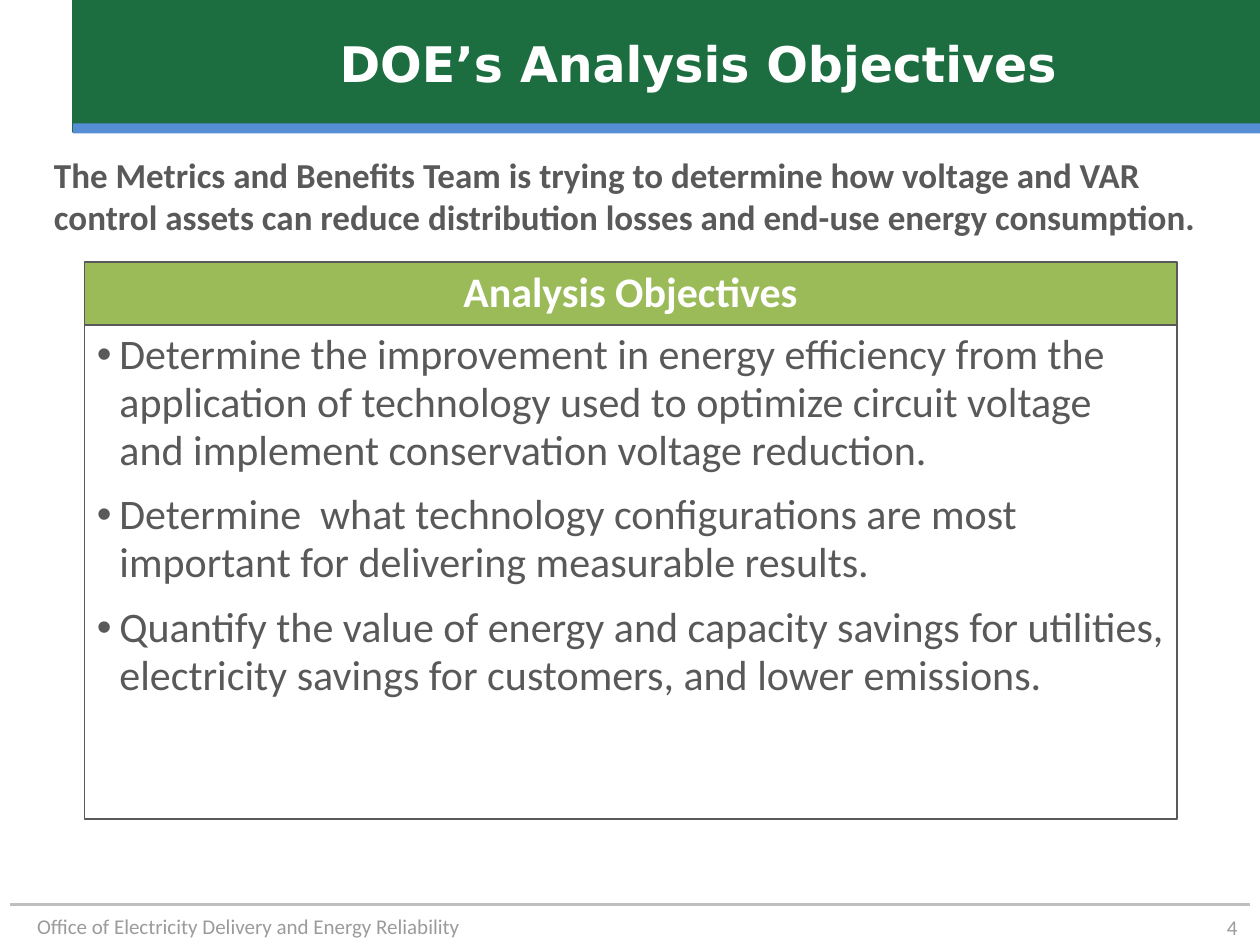
from lxml.etree import SubElement
from pptx import Presentation
from pptx.dml.color import RGBColor
from pptx.enum.shapes import MSO_CONNECTOR, MSO_SHAPE
from pptx.enum.text import MSO_ANCHOR, PP_ALIGN
from pptx.oxml.ns import qn
from pptx.util import Inches, Pt

COLORS = {
    "green": "1C6E41",
    "blue": "558ED5",
    "lime": "9BBB59",
    "text": "595959",
    "footer": "9B9B9B",
    "rule": "BFBFBF",
    "white": "FFFFFF",
}

OBJECTIVES = [
    "Determine the improvement in energy efficiency from the application of "
    "technology used to optimize circuit voltage and implement conservation "
    "voltage reduction.",
    "Determine  what technology configurations are most important for "
    "delivering measurable results.",
    "Quantify the value of energy and capacity savings for utilities, "
    "electricity savings for customers, and lower emissions.",
]


def color(name):
    return RGBColor.from_string(COLORS[name])


def add_rectangle(page, left, top, width, height, fill=None, line=None):
    box = page.shapes.add_shape(
        MSO_SHAPE.RECTANGLE, Inches(left), Inches(top), Inches(width), Inches(height))
    box.shadow.inherit = False
    if fill:
        box.fill.solid()
        box.fill.fore_color.rgb = color(fill)
    else:
        box.fill.background()
    if line:
        box.line.color.rgb = color(line)
        box.line.width = Pt(1)
    else:
        box.line.fill.background()
    return box


def add_text_box(page, left, top, width, height):
    return page.shapes.add_textbox(
        Inches(left), Inches(top), Inches(width), Inches(height))


def add_rule(page, left, right, top):
    rule = page.shapes.add_connector(
        MSO_CONNECTOR.STRAIGHT, Inches(left), Inches(top), Inches(right), Inches(top))
    rule.line.color.rgb = color("rule")
    rule.line.width = Pt(1.75)
    SubElement(rule._element.spPr, qn("a:effectLst"))


def add_bullet(para, indent):
    properties = para._p.get_or_add_pPr()
    properties.set("marL", str(Inches(indent)))
    properties.set("indent", str(-Inches(indent)))
    SubElement(properties, qn("a:buFont"), typeface="Arial")
    SubElement(properties, qn("a:buChar"), char="•")


def write_text(box, *texts, size, ink, font="Calibri", bold=False,
               align=PP_ALIGN.LEFT, anchor=MSO_ANCHOR.TOP, spacing=None,
               gap=0, bullet_indent=None, vertical_inset=0.05):
    frame = box.text_frame
    frame.word_wrap = True
    frame.vertical_anchor = anchor
    frame.margin_top = frame.margin_bottom = Inches(vertical_inset)
    for index, text in enumerate(texts):
        para = frame.add_paragraph() if index else frame.paragraphs[0]
        para.alignment = align
        if spacing:
            para.line_spacing = spacing
        if index:
            para.space_before = Pt(gap)
        if bullet_indent:
            add_bullet(para, bullet_indent)
        span = para.add_run()
        span.text = text
        span.font.name = font
        span.font.size = Pt(size)
        span.font.bold = bold
        span.font.color.rgb = color(ink)


def add_header(page):
    add_rectangle(page, 0.58, 0, 9.42, 1.05, fill="green", line="green")
    add_rectangle(page, 0.58, 0.98, 9.42, 0.08, fill="blue")
    title = add_text_box(page, 1.08, 0, 8.92, 1)
    write_text(title, "DOE’s Analysis Objectives", size=28, ink="white",
               font="DejaVu Sans", bold=True, align=PP_ALIGN.CENTER,
               anchor=MSO_ANCHOR.MIDDLE)


def add_footer(page):
    add_rule(page, 0.08, 9.92, 7.18)
    office = add_text_box(page, 0, 7.2, 3.75, 0.3)
    write_text(office, "Office of Electricity Delivery and Energy Reliability",
               size=12, ink="footer", align=PP_ALIGN.RIGHT)
    number = add_text_box(page, 7.42, 7.21, 2.5, 0.29)
    write_text(number, "4", size=12, ink="footer", align=PP_ALIGN.RIGHT,
               anchor=MSO_ANCHOR.MIDDLE, vertical_inset=0)


def add_objectives(page, left, top, width, heading_height, body_height):
    body = add_rectangle(page, left, top + heading_height, width, body_height,
                         line="text")
    write_text(body, *OBJECTIVES, size=24, ink="text", spacing=0.95, gap=9.6,
               bullet_indent=0.18)
    heading = add_rectangle(page, left, top, width, heading_height,
                            fill="lime", line="text")
    write_text(heading, "Analysis Objectives", size=24, ink="white", bold=True,
               align=PP_ALIGN.CENTER, anchor=MSO_ANCHOR.MIDDLE, spacing=0.9,
               vertical_inset=0)


def main():
    deck = Presentation()
    deck.slide_width, deck.slide_height = Inches(10), Inches(7.5)
    page = deck.slides.add_slide(deck.slide_layouts[6])

    # Banner and footer
    add_header(page)
    add_footer(page)

    # Lead statement
    lead = add_text_box(page, 0.33, 1.17, 9.3, 0.75)
    write_text(lead, "The Metrics and Benefits Team is trying to determine how "
               "voltage and VAR control assets can reduce distribution losses "
               "and end-use energy consumption.", size=20, ink="text", bold=True)

    # Objectives panel
    add_objectives(page, 0.67, 2.08, 8.67, 0.5, 3.92)
    deck.save("out.pptx")


if __name__ == "__main__":
    main()
